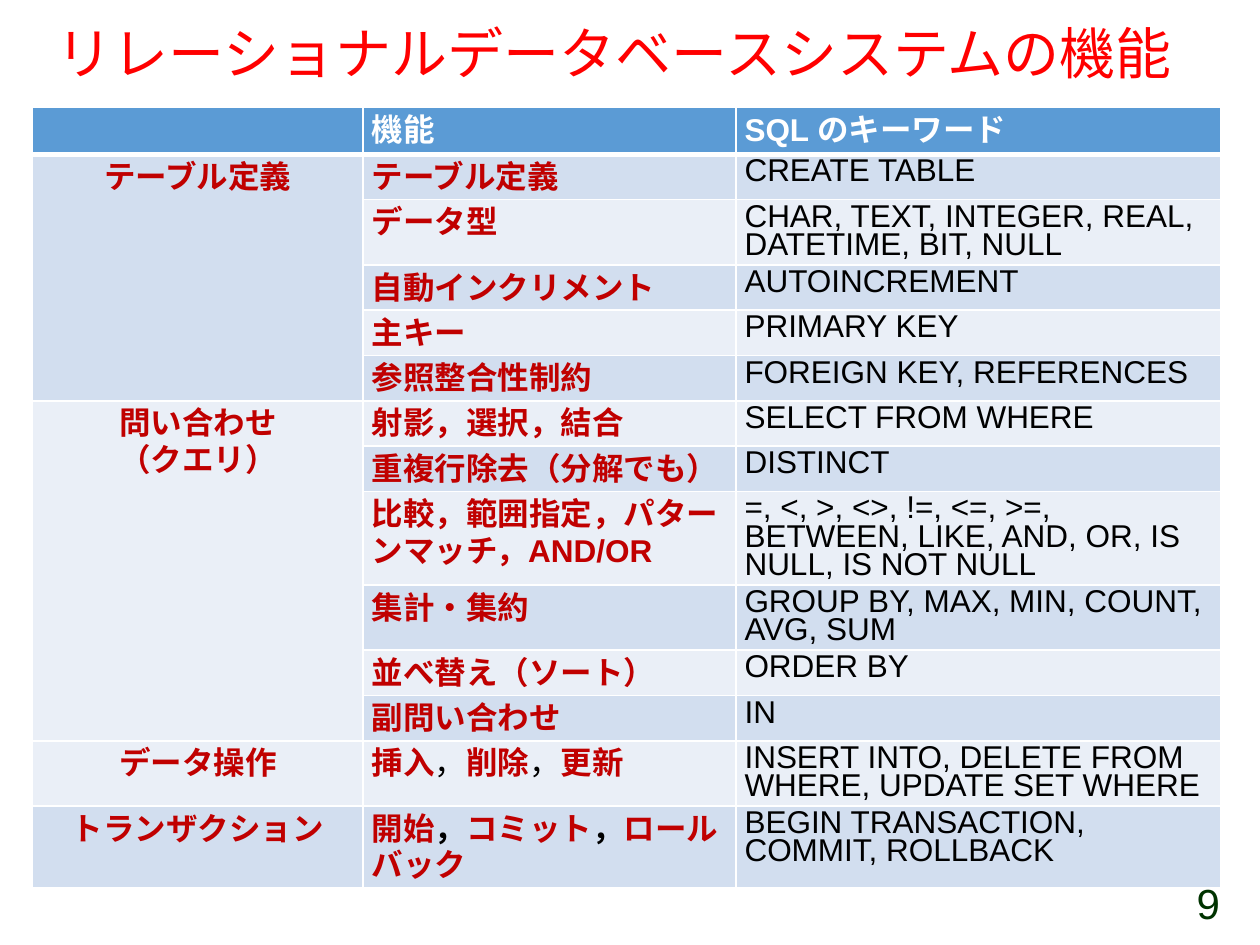
"""Build a slide that lists relational database features and their SQL keywords."""
from dataclasses import dataclass

from lxml import etree
from pptx import Presentation
from pptx.dml.color import RGBColor
from pptx.enum.text import MSO_ANCHOR, MSO_AUTO_SIZE, PP_ALIGN
from pptx.oxml.ns import qn
from pptx.util import Inches, Pt

LEFT, CENTER, RIGHT = PP_ALIGN.LEFT, PP_ALIGN.CENTER, PP_ALIGN.RIGHT
MIDDLE = MSO_ANCHOR.MIDDLE
NO_AUTOFIT = MSO_AUTO_SIZE.NONE
WHITE = RGBColor(0xFF, 0xFF, 0xFF)
BLACK = RGBColor(0x00, 0x00, 0x00)
TITLE_RED = RGBColor(0xFF, 0x00, 0x00)
DARK_RED = RGBColor(0xC0, 0x00, 0x00)
DARK_GREEN = RGBColor(0x00, 0x33, 0x00)
HEADER_BLUE = RGBColor(0x5B, 0x9B, 0xD5)
BANDS = (RGBColor(0xEA, 0xEF, 0xF7), RGBColor(0xD2, 0xDE, 0xEF))
FONT = "Arial"
COLUMN_WIDTHS = (2.62, 2.96, 3.85)
HEADER_HEIGHT = 0.17
THIN, THICK = 1, 3


@dataclass(frozen=True)
class Span:
    text: str
    color: RGBColor = DARK_RED
    bold: bool = True
    size: int = 18


@dataclass(frozen=True)
class Feature:
    name: tuple[Span, ...]
    keywords: str
    height: float = 0.27


@dataclass(frozen=True)
class Group:
    label: tuple[str, ...]
    features: tuple[Feature, ...]


COMMA = Span("，", BLACK, False)
BOLD_COMMA = Span("，", BLACK)
HEADINGS = ("", "機能", "SQL のキーワード")
GROUPS = (
    Group(("テーブル定義",), (
        Feature((Span("テーブル定義"),), "CREATE TABLE"),
        Feature((Span("データ型"),), "CHAR, TEXT, INTEGER, REAL, DATETIME, BIT, NULL", 0.36),
        Feature((Span("自動インクリメント"),), "AUTOINCREMENT"),
        Feature((Span("主キー"),), "PRIMARY KEY"),
        Feature((Span("参照整合性制約"),), "FOREIGN KEY, REFERENCES", 0.24),
    )),
    Group(("問い合わせ", "（クエリ）"), (
        Feature((Span("射影，選択，結合"),), "SELECT FROM WHERE"),
        Feature((Span("重複行除去（分解でも）"),), "DISTINCT"),
        Feature((Span("比較，範囲指定，パターンマッチ，AND/OR"),),
                "=, <, >, <>, !=, <=, >=, BETWEEN, LIKE, AND, OR, IS NULL, IS NOT NULL"),
        Feature((Span("集計・集約"),), "GROUP BY, MAX, MIN, COUNT, AVG, SUM", 0.36),
        Feature((Span("並べ替え（ソート）"),), "ORDER BY"),
        Feature((Span("副問い合わせ"),), "IN"),
    )),
    Group(("データ操作",), (
        Feature((Span("挿入"), COMMA, Span("削除"), COMMA, Span("更新")),
                "INSERT INTO, DELETE FROM WHERE, UPDATE SET WHERE", 0.43),
    )),
    Group(("トランザクション",), (
        Feature((Span("開始"), BOLD_COMMA, Span("コミット"), BOLD_COMMA, Span("ロールバック")),
                "BEGIN TRANSACTION, COMMIT, ROLLBACK", 0.26),
    )),
)


def write_paragraph(paragraph, spans: tuple[Span, ...], align: PP_ALIGN, spacing: float) -> None:
    """Format a paragraph and add its spans as runs."""
    paragraph.alignment = align
    paragraph.line_spacing = spacing
    for span in spans:
        run = paragraph.add_run()
        run.text = span.text
        run.font.name = FONT
        run.font.size = Pt(span.size)
        run.font.bold = span.bold
        run.font.color.rgb = span.color


def write_line(shape, span: Span, align: PP_ALIGN) -> None:
    """Write one vertically centred line into a shape."""
    frame = shape.text_frame
    frame.word_wrap = True
    frame.auto_size = NO_AUTOFIT
    frame.vertical_anchor = MIDDLE
    write_paragraph(frame.paragraphs[0], (span,), align, 0.9)


def write_cell(cell, lines: tuple[tuple[Span, ...], ...], align: PP_ALIGN = LEFT) -> None:
    """Write lines of spans into a table cell."""
    frame = cell.text_frame
    for index, spans in enumerate(lines):
        paragraph = frame.add_paragraph() if index else frame.paragraphs[0]
        write_paragraph(paragraph, spans, align, 0.8)


def style_cell(cell, row: int) -> None:
    """Set the margins, fill and white borders of a cell by its row."""
    cell.margin_left = cell.margin_right = Inches(0.07)
    cell.margin_top, cell.margin_bottom = Inches(0.04), Inches(0.03)
    cell.fill.solid()
    cell.fill.fore_color.rgb = BANDS[row % 2] if row else HEADER_BLUE
    widths = {
        "lnL": THIN,
        "lnR": THIN,
        "lnT": THICK if row == 1 else THIN,
        "lnB": THICK if row == 0 else THIN,
    }
    properties = cell._tc.get_or_add_tcPr()
    for index, (side, width) in enumerate(widths.items()):
        line = etree.Element(qn(f"a:{side}"), w=str(Pt(width)))
        fill = etree.SubElement(line, qn("a:solidFill"))
        etree.SubElement(fill, qn("a:srgbClr"), val=str(WHITE))
        properties.insert(index, line)


def add_feature_table(slide) -> None:
    """Add the table of feature groups."""
    heights = [HEADER_HEIGHT] + [f.height for group in GROUPS for f in group.features]
    table = slide.shapes.add_table(
        len(heights), len(COLUMN_WIDTHS), Inches(0.26), Inches(0.85),
        Inches(sum(COLUMN_WIDTHS)), Inches(sum(heights))).table
    for column, width in zip(table.columns, COLUMN_WIDTHS):
        column.width = Inches(width)
    for index, height in enumerate(heights):
        table.rows[index].height = Inches(height)
        for cell in table.rows[index].cells:
            style_cell(cell, index)
    for column, heading in enumerate(HEADINGS):
        spans = (Span(heading, WHITE),) if heading else ()
        write_cell(table.cell(0, column), (spans,))
    row = 1
    for group in GROUPS:
        label_cell = table.cell(row, 0)
        if len(group.features) > 1:
            label_cell.merge(table.cell(row + len(group.features) - 1, 0))
        write_cell(label_cell, tuple((Span(text),) for text in group.label), CENTER)
        for feature in group.features:
            write_cell(table.cell(row, 1), (feature.name,))
            write_cell(table.cell(row, 2), ((Span(feature.keywords, BLACK, False),),))
            row += 1


def main() -> None:
    """Create and save the presentation."""
    presentation = Presentation()
    presentation.slide_width, presentation.slide_height = Inches(10), Inches(7.5)
    slide = presentation.slides.add_slide(presentation.slide_layouts[5])
    title = slide.shapes.title
    title.left, title.top = Inches(0.35), Inches(0.19)
    title.width, title.height = Inches(9.25), Inches(0.51)
    write_line(title, Span("リレーショナルデータベースシステムの機能", TITLE_RED, False, 32), LEFT)
    add_feature_table(slide)
    page_number = slide.shapes.add_textbox(Inches(7.53), Inches(6.99), Inches(2.25), Inches(0.4))
    write_line(page_number, Span("9", DARK_GREEN, False, 24), RIGHT)
    presentation.save("out.pptx")


if __name__ == "__main__":
    main()
